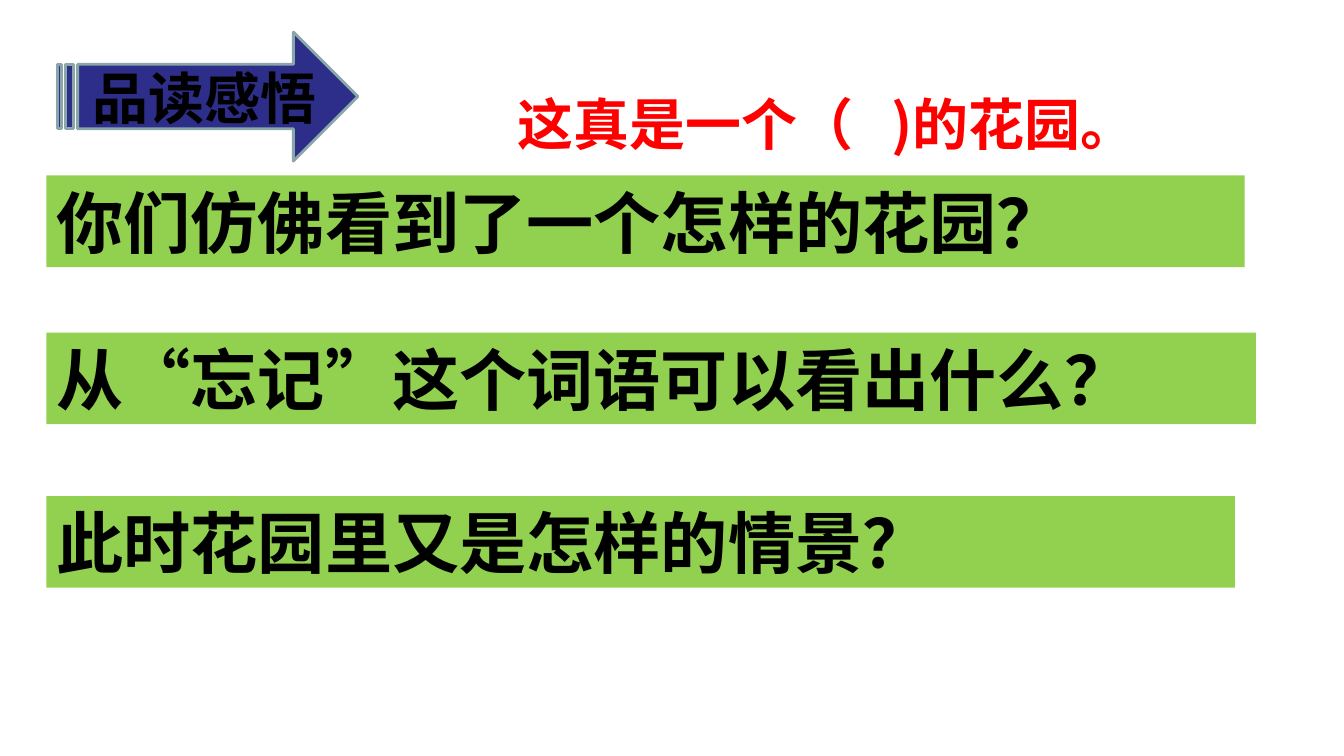
from pptx import Presentation
from pptx.dml.color import RGBColor
from pptx.enum.shapes import MSO_SHAPE
from pptx.enum.text import MSO_ANCHOR, PP_ALIGN
from pptx.oxml.ns import qn
from pptx.util import Cm, Pt

FONT = "Noto Sans CJK SC"
BLACK, RED, GREEN, NAVY, GREY = "000000", "FF0000", "92D050", "2D2D8A", "8AA6A8"
LEFT = 1.17
QUESTIONS = [
    ("你们仿佛看到了一个怎样的花园？", 4.42, 30.2),
    ("从“忘记”这个词语可以看出什么？", 8.38, 30.48),
    ("此时花园里又是怎样的情景？", 12.5, 29.95),
]


def color(code):
    return RGBColor.from_string(code)


def write(shape, text, size, code):
    """Set one bold, left-aligned line, centred on the shape's height."""
    frame = shape.text_frame
    frame.word_wrap = True
    frame.vertical_anchor = MSO_ANCHOR.MIDDLE
    line = frame.paragraphs[0]
    line.alignment = PP_ALIGN.LEFT
    run = line.add_run()
    run.text = text
    style = {"name": FONT, "size": Pt(size), "bold": True}
    for key, value in style.items():
        setattr(run.font, key, value)
    run.font.color.rgb = color(code)
    # East Asian glyphs take their typeface from a:ea
    east = run.font._element.makeelement(qn("a:ea"), {"typeface": FONT})
    run.font._element.append(east)


def block(slide, kind, box, fill):
    shape = slide.shapes.add_shape(kind, *map(Cm, box))
    shape.shadow.inherit = False
    shape.fill.solid()
    shape.fill.fore_color.rgb = color(fill)
    shape.line.fill.background()
    return shape


def label(slide, text, box, code):
    write(slide.shapes.add_textbox(*map(Cm, box)), text, 40, code)


def arrow(slide, box):
    shape = block(slide, MSO_SHAPE.STRIPED_RIGHT_ARROW, box, NAVY)
    shape.line.color.rgb = color(GREY)
    shape.line.width = Pt(2)


def main():
    deck = Presentation()
    deck.slide_width, deck.slide_height = Cm(33.87), Cm(19.05)
    slide = deck.slides.add_slide(deck.slide_layouts[6])
    arrow(slide, (1.45, 0.81, 7.57, 3.25))
    label(slide, "品读感悟", (2.08, 1.47, 6.27, 1.96), BLACK)
    for text, top, width in QUESTIONS:
        bar = block(slide, MSO_SHAPE.RECTANGLE, (LEFT, top, width, 2.31), GREEN)
        write(bar, text, 48, BLACK)
    label(slide, "这真是一个（   )的花园。", (12.8, 2.11, 17.27, 1.96), RED)
    deck.save("out.pptx")


if __name__ == "__main__":
    main()
